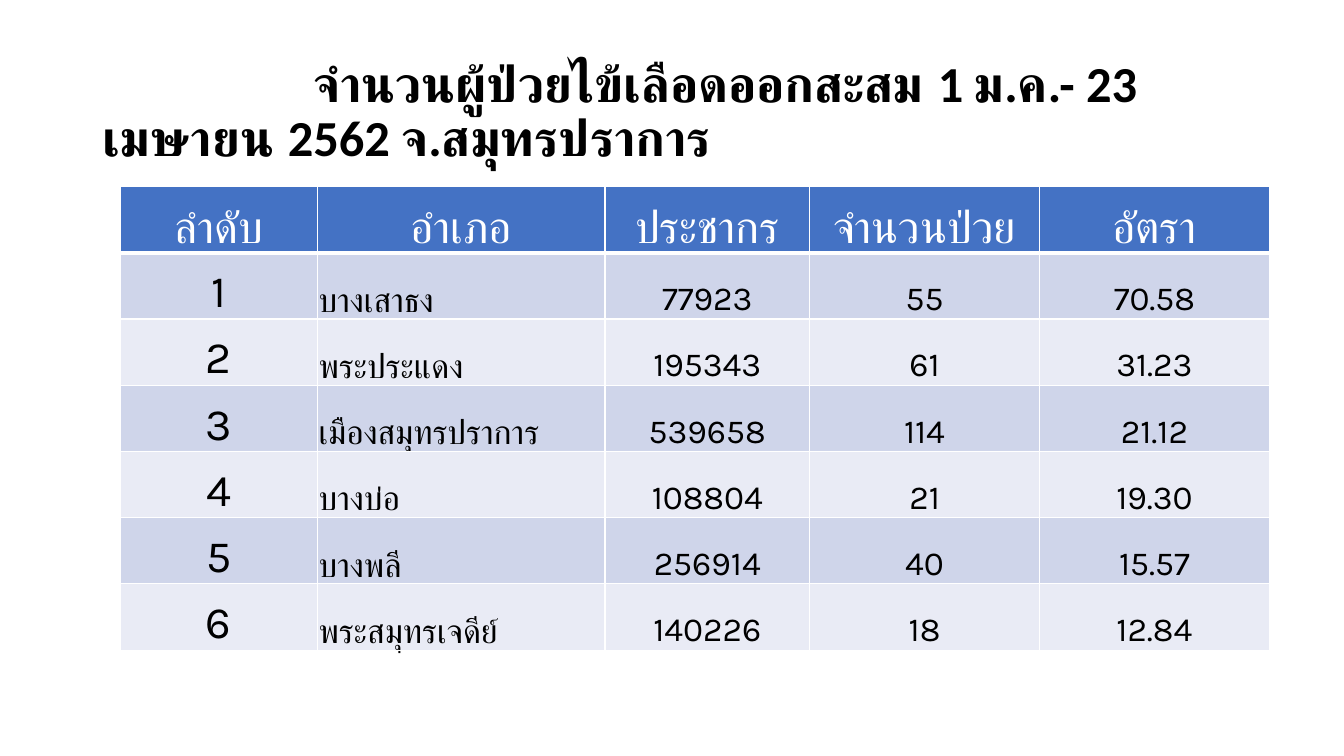
from lxml import etree
from pptx import Presentation
from pptx.dml.color import RGBColor
from pptx.enum import text
from pptx.oxml import ns
from pptx.util import Inches, Pt

BLACK = RGBColor(0x00, 0x00, 0x00)
WHITE = RGBColor(0xFF, 0xFF, 0xFF)
HEADER_BLUE = RGBColor(0x44, 0x72, 0xC4)
BAND_FILLS = (RGBColor(0xCF, 0xD5, 0xEA), RGBColor(0xE9, 0xEB, 0xF5))

TITLE = "จำนวนผู้ป่วยไข้เลือดออกสะสม 1 ม.ค.- 23 เมษายน 2562 จ.สมุทรปราการ"
TITLE_INDENT = Inches(2.09)
HEADERS = ("ลำดับ", "อำเภอ", "ประชากร", "จำนวนป่วย", "อัตรา")
DISTRICTS = (
    ("บางเสาธง", "77923", "55", "70.58"),
    ("พระประแดง", "195343", "61", "31.23"),
    ("เมืองสมุทรปราการ", "539658", "114", "21.12"),
    ("บางบ่อ", "108804", "21", "19.30"),
    ("บางพลี", "256914", "40", "15.57"),
    ("พระสมุทรเจดีย์", "140226", "18", "12.84"),
)
COLUMN_WIDTHS = (1.96, 2.85, 2.03, 2.28, 2.28)
NAME_COLUMN = 1
CELL_FORMAT = {
    "margin_left": Inches(0.01),
    "margin_top": Inches(0.01),
    "margin_right": Inches(0.01),
    "margin_bottom": 0,
    "vertical_anchor": text.MSO_ANCHOR.BOTTOM,
}


def set_font(font, name, size, color, bold=False):
    font.name, font.size, font.bold = name, Pt(size), bold
    font.color.rgb = color


def add_title(slide, left, top, width, height):
    frame = slide.shapes.add_textbox(left, top, width, height).text_frame
    frame.word_wrap = True
    frame.vertical_anchor = text.MSO_ANCHOR.MIDDLE
    paragraph = frame.paragraphs[0]
    paragraph.line_spacing = 0.9
    paragraph._p.get_or_add_pPr().set("indent", str(TITLE_INDENT))
    run = paragraph.add_run()
    run.text = TITLE
    set_font(run.font, "Calibri", 36, BLACK, bold=True)


def add_borders(cell, widths):
    """Draw white borders; widths maps a side (L, R, T, B) to points."""
    properties = cell._tc.get_or_add_tcPr()
    for side, points in widths.items():
        line = etree.SubElement(properties, ns.qn(f"a:ln{side}"), w=str(Pt(points)))
        fill = etree.SubElement(line, ns.qn("a:solidFill"))
        etree.SubElement(fill, ns.qn("a:srgbClr"), val=str(WHITE))


def fill_cell(cell, value, row, column):
    is_header = row == 0
    for attribute, setting in CELL_FORMAT.items():
        setattr(cell, attribute, setting)
    add_borders(cell, {"L": 1, "R": 1, "T": 3 if row == 1 else 1, "B": 3 if is_header else 1})
    cell.fill.solid()
    cell.fill.fore_color.rgb = HEADER_BLUE if is_header else BAND_FILLS[(row - 1) % 2]

    paragraph = cell.text_frame.paragraphs[0]
    is_name = column == NAME_COLUMN and not is_header
    paragraph.alignment = text.PP_ALIGN.LEFT if is_name else text.PP_ALIGN.CENTER
    run = paragraph.add_run()
    run.text = value
    size = 32 if is_header or column == 0 else 24
    set_font(run.font, "Karla", size, WHITE if is_header else BLACK)


def add_district_table(slide, left, top, width, height):
    rows = [HEADERS]
    rows += [(str(rank), *district) for rank, district in enumerate(DISTRICTS, 1)]
    table = slide.shapes.add_table(len(rows), len(HEADERS), left, top, width, height).table
    for column, column_width in zip(table.columns, COLUMN_WIDTHS):
        column.width = Inches(column_width)
    for row, values in enumerate(rows):
        for column, value in enumerate(values):
            fill_cell(table.cell(row, column), value, row, column)


def main():
    presentation = Presentation()
    presentation.slide_width = Inches(13.33)
    presentation.slide_height = Inches(7.5)
    slide = presentation.slides.add_slide(presentation.slide_layouts[6])
    add_title(slide, Inches(0.92), Inches(0.4), Inches(11.5), Inches(1.45))
    add_district_table(slide, Inches(1.19), Inches(1.85), Inches(11.4), Inches(4.6))
    presentation.save("out.pptx")


if __name__ == "__main__":
    main()
